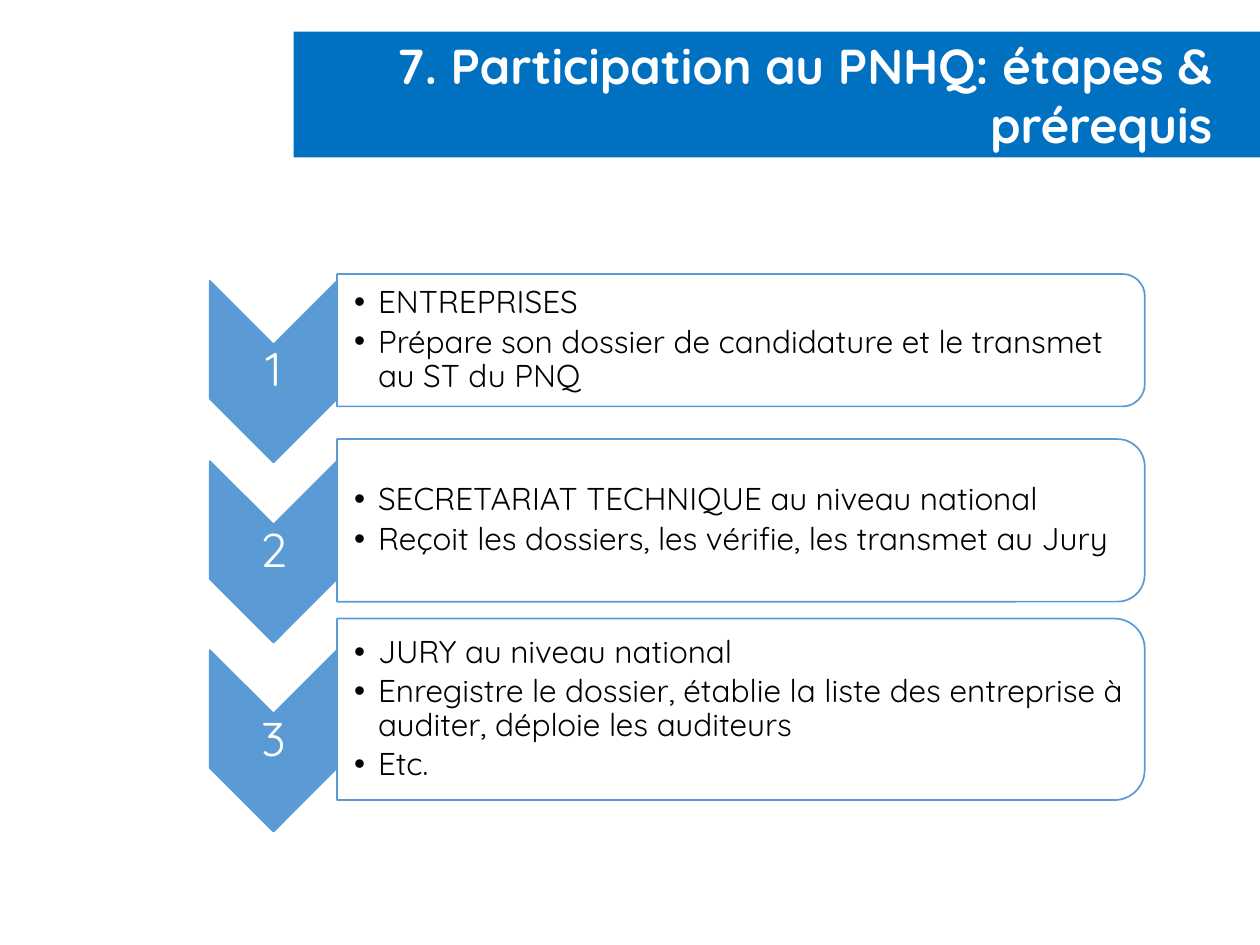
from lxml.etree import SubElement
from pptx import Presentation
from pptx.dml.color import RGBColor
from pptx.enum.shapes import MSO_SHAPE
from pptx.enum.text import MSO_ANCHOR, MSO_AUTO_SIZE, PP_ALIGN
from pptx.oxml.ns import qn
from pptx.util import Inches, Pt

FONT = "Quicksand"
COLORS = {"band": "0070C0", "step": "5B9BD5", "white": "FFFFFF", "text": "000000"}

deck = Presentation()
deck.slide_width, deck.slide_height = Inches(10), Inches(7.5)
slide = deck.slides.add_slide(deck.slide_layouts.get_by_name("Comparison"))
shapes = slide.shapes
holders = {item.placeholder_format.idx: item for item in slide.placeholders}


def write(shape, lines, size, color, align, insets, bold=False):
    """Fill a shape with paragraphs in one uniform style."""
    frame = shape.text_frame
    frame.text = "\n".join(lines)
    frame.word_wrap = True
    frame.auto_size = MSO_AUTO_SIZE.NONE
    frame.vertical_anchor = MSO_ANCHOR.MIDDLE
    (frame.margin_left, frame.margin_top,
     frame.margin_right, frame.margin_bottom) = map(Inches, insets)
    for para in frame.paragraphs:
        para.alignment = align
        para.space_before = Pt(0)
        for run in para.runs:
            run.font.name, run.font.size, run.font.bold = FONT, Pt(size), bold
            run.font.color.rgb = RGBColor.from_string(COLORS[color])


def place(shape, mid_x, mid_y, width, height):
    """Size a shape and centre it on a point."""
    shape.width, shape.height = Inches(width), Inches(height)
    shape.left, shape.top = Inches(mid_x - width / 2), Inches(mid_y - height / 2)


# Title band
title = shapes.title
place(title, 6.165, 0.75, 7.67, 1)
title.fill.solid()
title.fill.fore_color.rgb = RGBColor.from_string(COLORS["band"])
write(title, ["7. Participation au PNHQ: étapes & prérequis"], 28, "white",
      PP_ALIGN.RIGHT, (0.07, 0.04, 0.38, 0.04), bold=True)

# Steps: placeholder, chevron centre, box centre, box height, list lines
STEP_X, BOX_X, BOX_W = 2.17, 5.88, 6.41
steps = [
    (1, 2.95, 2.7, 1.05, [
        "ENTREPRISES",
        "Prépare son dossier de candidature et le transmet au ST du PNQ"]),
    (2, 4.38, 4.13, 1.29, [
        "SECRETARIAT TECHNIQUE au niveau national",
        "Reçoit les dossiers, les vérifie, les transmet au Jury"]),
    (4, 5.88, 5.63, 1.44, [
        "JURY au niveau national",
        "Enregistre le dossier, établie la liste des entreprise à auditer, "
        "déploie les auditeurs",
        "Etc."]),
]
for number, (idx, step_y, box_y, box_h, lines) in enumerate(steps, 1):
    # Chevron and box, both turned a quarter
    for kind, spot, fill in (
            (MSO_SHAPE.CHEVRON, (STEP_X, step_y, 1.44, 1.01), "step"),
            (MSO_SHAPE.ROUND_2_SAME_RECTANGLE, (BOX_X, box_y, box_h, BOX_W), "white")):
        shape = shapes.add_shape(kind, 0, 0, 0, 0)
        place(shape, *spot)
        shape.rotation = 90
        shape.shadow.inherit = False
        shape.fill.solid()
        shape.fill.fore_color.rgb = RGBColor.from_string(COLORS[fill])
        shape.line.color.rgb = RGBColor.from_string(COLORS["step"])
        shape.line.width = Pt(1)

    # Step number
    label = shapes.add_textbox(0, 0, 0, 0)
    place(label, STEP_X, step_y, 1.01, 0.43)
    write(label, [str(number)], 27, "white", PP_ALIGN.CENTER, (0.02,) * 4)
    label.text_frame.paragraphs[0].line_spacing = 0.9

    # Bulleted list, brought in front of its box
    body = holders[idx]
    place(body, 5.85, box_y, 6.36, box_h - 0.1)
    write(body, lines, 18, "text", PP_ALIGN.LEFT, (0.14, 0.01, 0.01, 0.01))
    for para in body.text_frame.paragraphs:
        para.line_spacing = 0.9
        para.space_after = Pt(3)
        props = para._p.get_or_add_pPr()
        props.set("marL", str(Inches(0.19)))
        props.set("indent", str(Inches(-0.19)))
        SubElement(props, qn("a:buFont"), typeface="Arial")
        SubElement(props, qn("a:buChar"), char="•")
    shapes._spTree.append(body._element)

# Drop the unused placeholders
for item in list(slide.placeholders):
    if not item.text_frame.text:
        shapes._spTree.remove(item._element)

deck.save("out.pptx")
